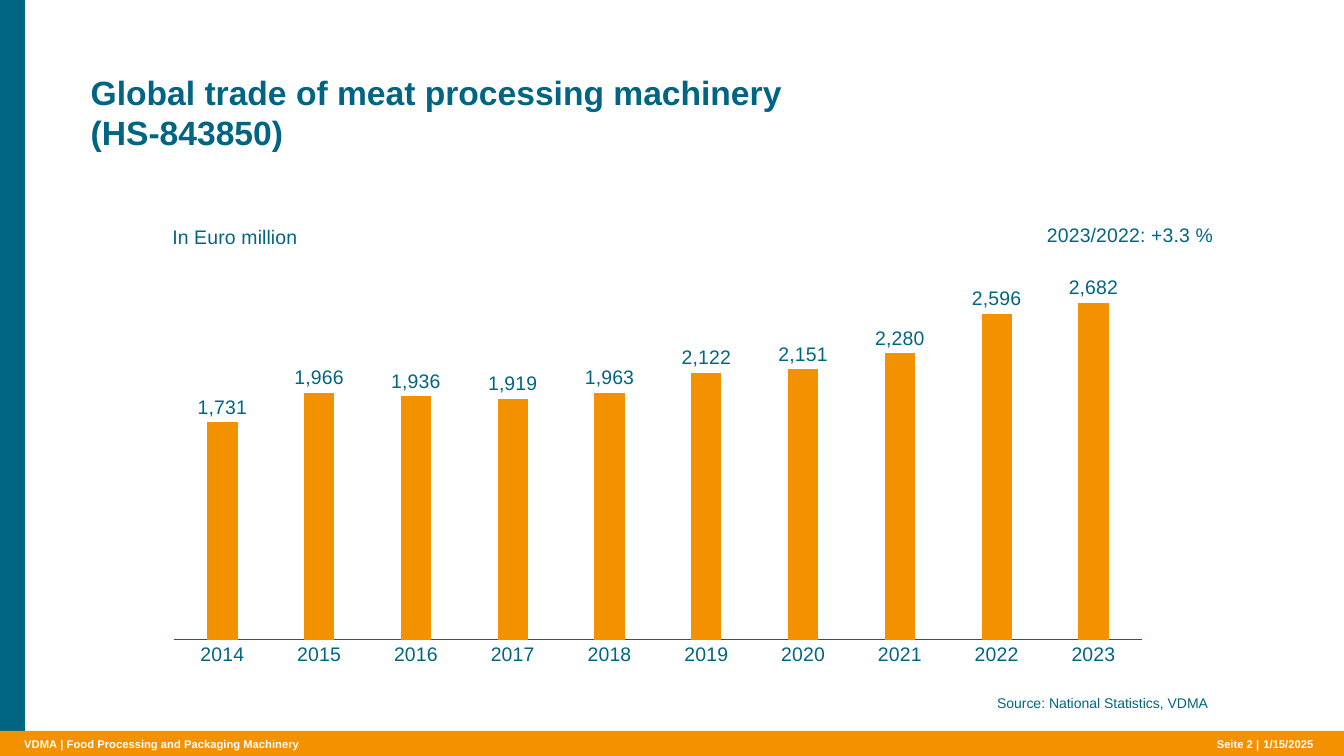
from lxml import etree
from pptx import Presentation
from pptx.chart.data import CategoryChartData
from pptx.dml.color import RGBColor
from pptx.enum.chart import XL_CHART_TYPE as ChartType, XL_LABEL_POSITION as LabelPosition
from pptx.enum.chart import XL_TICK_MARK as TickMark
from pptx.enum.shapes import MSO_SHAPE as Shape
from pptx.enum.text import MSO_ANCHOR as Anchor, PP_ALIGN as Align
from pptx.oxml.ns import qn
from pptx.util import Inches, Pt

TEAL = RGBColor(0x00, 0x65, 0x82)
ORANGE = RGBColor(0xF4, 0x91, 0x00)
WHITE = RGBColor(0xFF, 0xFF, 0xFF)


def style_font(font, size, color, bold=False):
    font.name = "Arial"
    font.size = Pt(size)
    font.bold = bold
    font.color.rgb = color


def place_in_chart(parent, index, **settings):
    for old in parent.findall(qn("c:layout")):
        parent.remove(old)
    layout = etree.Element(qn("c:layout"))
    manual = etree.SubElement(layout, qn("c:manualLayout"))
    for tag, value in settings.items():
        etree.SubElement(manual, qn("c:" + tag)).set("val", str(value))
    parent.insert(index, layout)


deck = Presentation()
deck.slide_width = Inches(13.33)
deck.slide_height = Inches(7.5)
page = deck.slides.add_slide(deck.slide_layouts[6])

bars = [(0, 0, 0.25, 7.5, TEAL), (0, 7.25, 13.33, 0.25, ORANGE)]
for left, top, width, height, color in bars:
    bar = page.shapes.add_shape(
        Shape.RECTANGLE, Inches(left), Inches(top), Inches(width), Inches(height))
    bar.shadow.inherit = False
    bar.fill.solid()
    bar.fill.fore_color.rgb = color
    bar.line.fill.background()

texts = [
    ("Global trade of meat processing machinery\v(HS-843850)",
     0.9, 0.71, 9.87, 0.81, 24, TEAL, True, Align.LEFT, Anchor.TOP),
    ("VDMA", 0.24, 7.32, 0.36, 0.13, 8, WHITE, True, Align.LEFT, Anchor.MIDDLE),
    ("| Food Processing and Packaging Machinery",
     0.6, 7.32, 3.85, 0.13, 8, WHITE, True, Align.LEFT, Anchor.MIDDLE),
    ("Seite 2 |", 11.9, 7.32, 0.59, 0.13, 8, WHITE, True, Align.RIGHT, Anchor.MIDDLE),
    ("1/15/2025", 12.53, 7.32, 0.7, 0.13, 8, WHITE, True, Align.LEFT, Anchor.MIDDLE),
    ("Source: National Statistics, VDMA",
     8.86, 6.89, 3.12, 0.18, 10, TEAL, False, Align.RIGHT, Anchor.TOP),
]
for text, left, top, width, height, size, color, bold, align, anchor in texts:
    box = page.shapes.add_textbox(Inches(left), Inches(top), Inches(width), Inches(height))
    frame = box.text_frame
    frame.margin_left = frame.margin_right = frame.margin_top = frame.margin_bottom = 0
    frame.word_wrap = True
    frame.vertical_anchor = anchor
    para = frame.paragraphs[0]
    para.text = text
    para.alignment = align
    style_font(para.font, size, color, bold)

trade = CategoryChartData(number_format="#,##0")
trade.categories = [str(year) for year in range(2014, 2024)]
trade.add_series("Series 1", [1731, 1966, 1936, 1919, 1963, 2122, 2151, 2280, 2596, 2682])
chart = page.shapes.add_chart(
    ChartType.COLUMN_CLUSTERED, Inches(1.57), Inches(2.1), Inches(10.5), Inches(4.65),
    trade).chart
style_font(chart.font, 14, TEAL)
chart.has_legend = False

year_axis = chart.category_axis
year_axis.major_tick_mark = TickMark.NONE
year_axis.format.line.color.rgb = TEAL
year_axis.format.line.width = Pt(0.75)
style_font(year_axis.tick_labels.font, 14, TEAL)

value_axis = chart.value_axis
value_axis.visible = False
value_axis.has_major_gridlines = False
value_axis.minimum_scale = 0
value_axis.maximum_scale = 3000

plot = chart.plots[0]
plot.gap_width = 219
plot.overlap = -27
plot.vary_by_categories = False
series = plot.series[0]
series.format.fill.solid()
series.format.fill.fore_color.rgb = ORANGE
labels = series.data_labels
labels.show_value = True
labels.position = LabelPosition.OUTSIDE_END
labels.number_format = "#,##0"
labels.number_format_is_linked = False
style_font(labels.font, 14, TEAL)

chart.has_title = True
year_axis.has_title = True
titles = [(chart.chart_title, "In Euro million"), (year_axis.axis_title, "2023/2022: +3.3 %")]
for title, text in titles:
    para = title.text_frame.paragraphs[0]
    para.text = text
    style_font(para.font, 14, TEAL)

chart_xml = chart.element if hasattr(chart, "element") else chart._chartSpace
plot_area = chart_xml.find(".//" + qn("c:plotArea"))
place_in_chart(plot_area, 0, layoutTarget="inner", xMode="edge", yMode="edge",
               x=0.015, y=0.109, w=0.923, h=0.805)
unit_title = chart_xml.find(qn("c:chart")).find(qn("c:title"))
change_title = plot_area.find(".//" + qn("c:title"))
for title_xml, x, y in [(unit_title, 0.01, 0.02), (change_title, 0.844, 0.016)]:
    place_in_chart(title_xml, 1, xMode="edge", yMode="edge", x=x, y=y)

deck.save("out.pptx")
